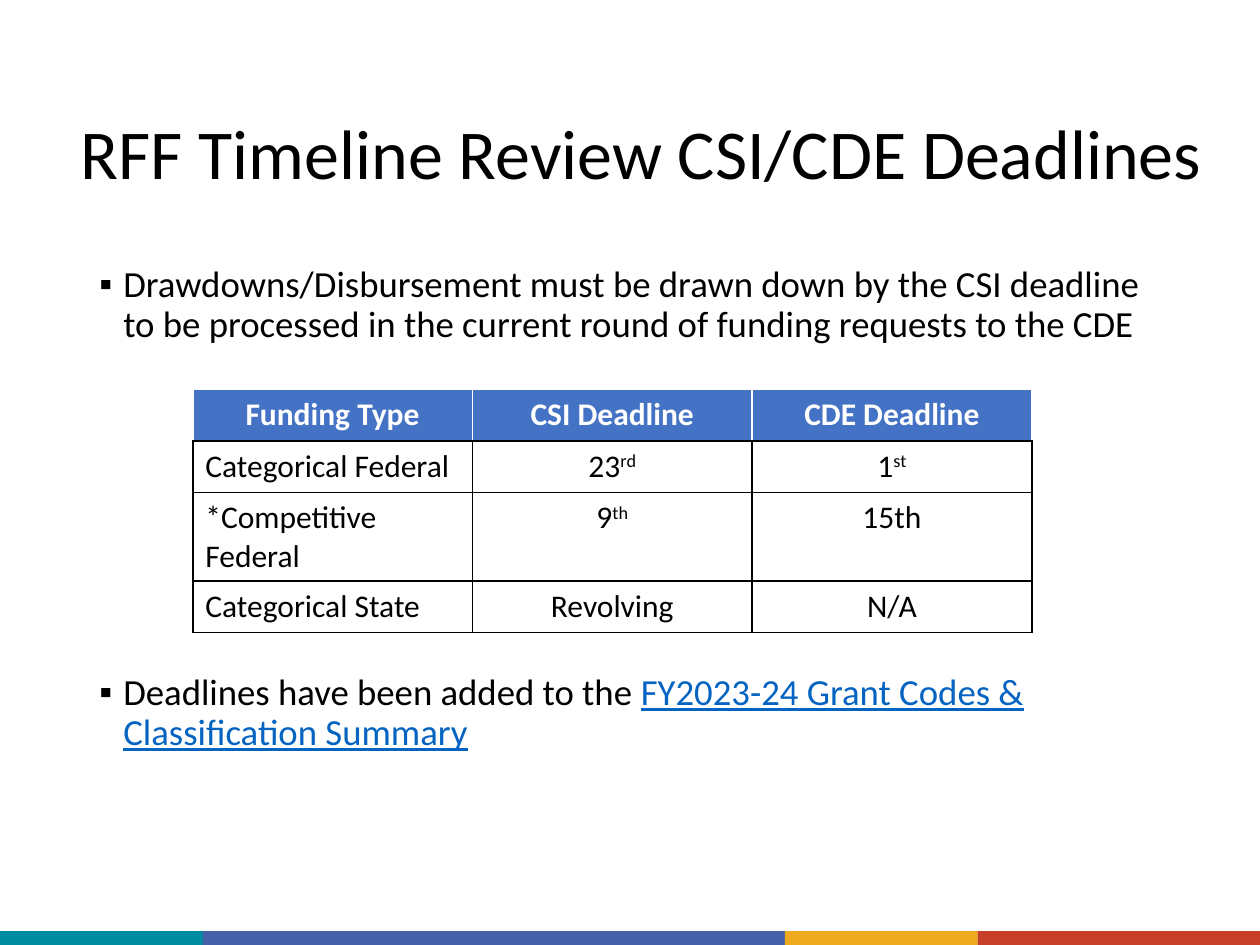
from lxml import etree
from pptx import Presentation
from pptx.dml.color import RGBColor
from pptx.enum.shapes import MSO_SHAPE
from pptx.enum.text import MSO_ANCHOR, MSO_AUTO_SIZE, PP_ALIGN
from pptx.oxml.ns import qn
from pptx.util import Inches, Pt

RECTANGLE = MSO_SHAPE.RECTANGLE
LEFT, CENTER = PP_ALIGN.LEFT, PP_ALIGN.CENTER
FONT = "Calibri"
COLORS = {
    "text": "000000", "white": "FFFFFF", "header": "4472C4", "link": "0563C1",
    "teal": "008CA0", "blue": "455FA9", "gold": "EFAA1F", "red": "C63F28",
}

# Content
TITLE = "RFF Timeline Review CSI/CDE Deadlines"
# Each bullet: space before in points, plain text, link text
BULLETS = [
    (0, "Drawdowns/Disbursement must be drawn down by the CSI deadline "
        "to be processed in the current round of funding requests to the CDE", ""),
    (188, "Deadlines have been added to the ",
     "FY2023-24 Grant Codes & Classification Summary"),
]
# Each cell: text, superscript
ROWS = [
    [("Funding Type", ""), ("CSI Deadline", ""), ("CDE Deadline", "")],
    [("Categorical Federal", ""), ("23", "rd"), ("1", "st")],
    [("*Competitive Federal", ""), ("9", "th"), ("15th", "")],
    [("Categorical State", ""), ("Revolving", ""), ("N/A", "")],
]
FOOTER_BANDS = [("teal", 1.61), ("blue", 4.62), ("gold", 1.53), ("red", 2.24)]
FOOTER_TOP, FOOTER_HEIGHT = 7.39, 0.11
COLUMN_WIDTH, ROW_HEIGHT = 2.22, 0.41


def color(name):
    return RGBColor.from_string(COLORS[name])


def set_font(font, size, name="text", bold=False):
    font.name, font.size, font.bold = FONT, Pt(size), bold
    font.color.rgb = color(name)


def add_bullet(paragraph):
    properties = paragraph._p.get_or_add_pPr()
    properties.set("marL", str(Inches(0.19)))
    properties.set("indent", str(-Inches(0.19)))
    etree.SubElement(properties, qn("a:buFont")).set("typeface", "Arial")
    etree.SubElement(properties, qn("a:buChar")).set("char", "▪")


def set_borders(cell, names):
    properties = cell._tc.get_or_add_tcPr()
    for index, (side, name) in enumerate(zip(("lnL", "lnR", "lnT", "lnB"), names)):
        line = etree.Element(qn(f"a:{side}"), w=str(Pt(1)))
        fill = etree.SubElement(line, qn("a:solidFill"))
        etree.SubElement(fill, qn("a:srgbClr")).set("val", COLORS[name])
        properties.insert(index, line)


presentation = Presentation()
presentation.slide_width, presentation.slide_height = Inches(10), Inches(7.5)
slide = presentation.slides.add_slide(presentation.slide_layouts[5])

# Footer bands
left = 0
for name, width in FOOTER_BANDS:
    band = slide.shapes.add_shape(RECTANGLE, Inches(left), Inches(FOOTER_TOP),
                                  Inches(width), Inches(FOOTER_HEIGHT))
    band.shadow.inherit = False
    band.fill.solid()
    band.fill.fore_color.rgb = color(name)
    band.line.fill.background()
    left += width

# Title
title = slide.shapes.title
title.left, title.top = Inches(0.54), Inches(0.52)
title.width, title.height = Inches(9.46), Inches(1.45)
title.text_frame.text = TITLE
title.text_frame.auto_size = MSO_AUTO_SIZE.NONE
title.text_frame.vertical_anchor = MSO_ANCHOR.MIDDLE
paragraph = title.text_frame.paragraphs[0]
paragraph.alignment, paragraph.line_spacing = LEFT, 0.9
set_font(paragraph.font, 40)

# Bullets above and below the table
body = slide.shapes.add_textbox(Inches(0.69), Inches(1.64), Inches(8.62), Inches(5.12))
frame = body.text_frame
frame.word_wrap = True
frame.margin_top = Inches(0.47)
for index, (space, text, link) in enumerate(BULLETS):
    paragraph = frame.add_paragraph() if index else frame.paragraphs[0]
    paragraph.line_spacing = 0.9
    paragraph.space_before = Pt(space)
    add_bullet(paragraph)
    set_font(paragraph.font, 21)
    paragraph.add_run().text = text
    if link:
        run = paragraph.add_run()
        run.text = link
        run.font.underline = True
        run.font.color.rgb = color("link")

# Deadline table
row_count, column_count = len(ROWS), len(ROWS[0])
table = slide.shapes.add_table(row_count, column_count, Inches(1.53), Inches(3.09),
                               Inches(COLUMN_WIDTH * column_count),
                               Inches(ROW_HEIGHT * row_count)).table
for row_index, row in enumerate(ROWS):
    header = row_index == 0
    for column_index, (text, superscript) in enumerate(row):
        cell = table.cell(row_index, column_index)
        if header:
            cell.fill.solid()
            cell.fill.fore_color.rgb = color("header")
        else:
            cell.fill.background()
        edge = "white" if header else "text"
        top = "white" if header else "text"
        set_borders(cell, (edge, edge, top, "text"))
        paragraph = cell.text_frame.paragraphs[0]
        paragraph.alignment = CENTER if header or column_index else LEFT
        set_font(paragraph.font, 18, "white" if header else "text", header)
        paragraph.add_run().text = text
        if superscript:
            run = paragraph.add_run()
            run.text = superscript
            run.font._element.set("baseline", "30000")

presentation.save("out.pptx")
